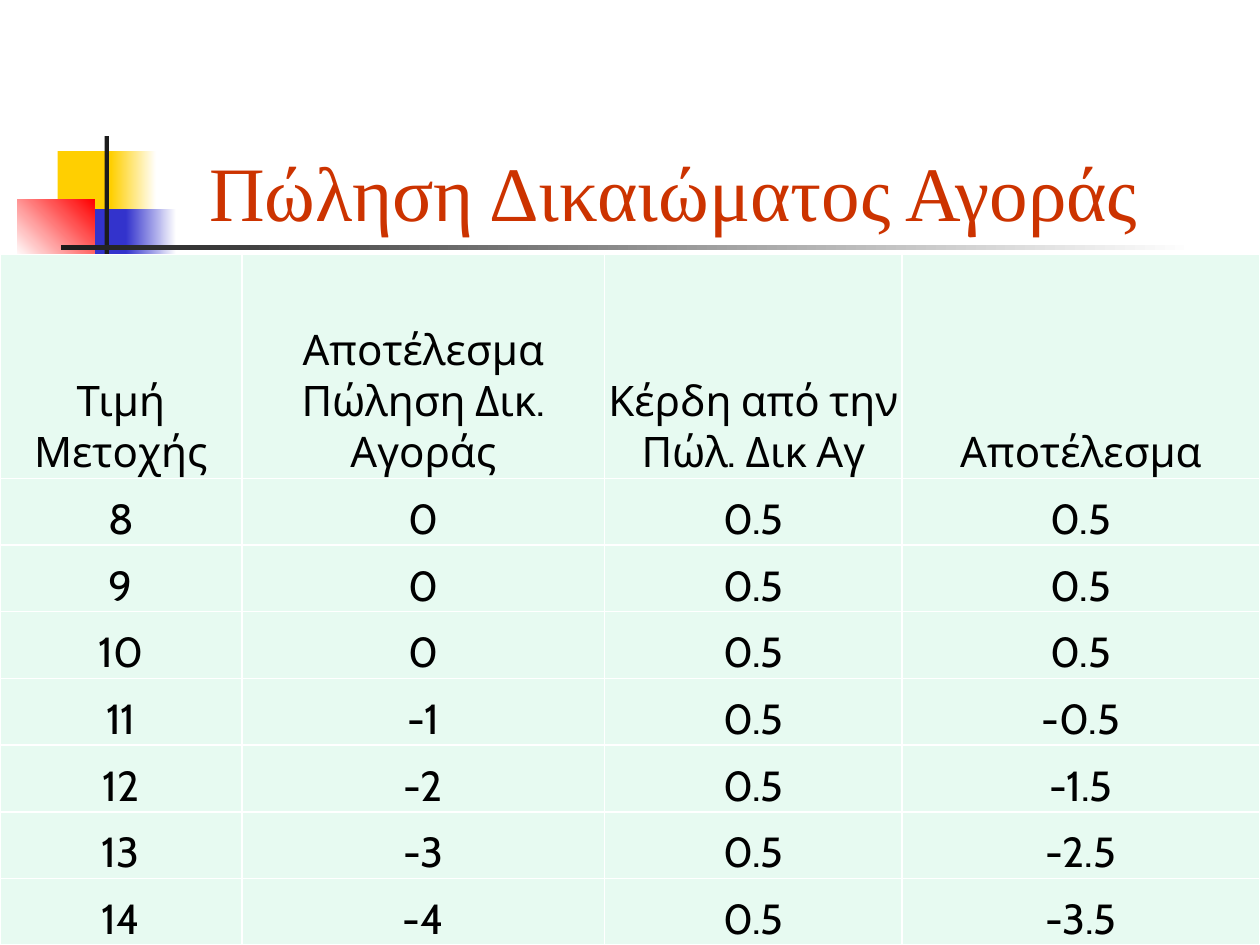
from pptx import Presentation
from pptx.dml.color import RGBColor
from pptx.enum.shapes import MSO_SHAPE
from pptx.enum.text import MSO_ANCHOR, PP_ALIGN
from pptx.oxml.xmlchemy import OxmlElement
from pptx.util import Pt

HUES = {
    "gold": "FFCF01", "blue": "3333CC", "red": "FF0000", "dark": "1C1C1C",
    "white": "FFFFFF", "title": "CC3300", "mint": "E7FAF1", "text": "000000",
}


def hue(name):
    return RGBColor.from_string(HUES[name])


class Deck:
    head_font = "Times New Roman"
    body_font = "Cabin"

    def __init__(self, wide, high):
        self.prs = Presentation()
        self.prs.slide_width, self.prs.slide_height = Pt(wide), Pt(high)
        self.slide = self.prs.slides.add_slide(self.prs.slide_layouts[5])

    def label(self, frame, text, font, size, color):
        frame.word_wrap = True
        para = frame.paragraphs[0]
        para.alignment = PP_ALIGN.CENTER
        run = para.add_run()
        run.text = text
        run.font.name, run.font.size = font, Pt(size)
        run.font.color.rgb = hue(color)

    def title(self, text, left, top, wide, high):
        box = self.slide.shapes.title
        box.left, box.top, box.width, box.height = map(Pt, (left, top, wide, high))
        box.text_frame.vertical_anchor = MSO_ANCHOR.BOTTOM
        self.label(box.text_frame, text, self.head_font, 44, "title")
        box.element.getparent().append(box.element)  # in front of the motif

    def block(self, left, top, wide, high, *colors, angle=0):
        shape = self.slide.shapes.add_shape(
            MSO_SHAPE.RECTANGLE, Pt(left), Pt(top), Pt(wide), Pt(high))
        shape.shadow.inherit = False
        shape.line.fill.background()
        if len(colors) == 1:
            shape.fill.solid()
            shape.fill.fore_color.rgb = hue(colors[0])
            return
        shape.fill.gradient()
        shape.fill.gradient_angle = angle
        for stop, color in zip(shape.fill.gradient_stops, colors):
            stop.color.rgb = hue(color)

    def border(self, cell):
        props = cell._tc.get_or_add_tcPr()
        for spot, side in enumerate(("lnL", "lnR", "lnT", "lnB")):
            line = OxmlElement(f"a:{side}")
            line.set("w", str(Pt(1)))
            fill = OxmlElement("a:solidFill")
            color = OxmlElement("a:srgbClr")
            color.set("val", HUES["white"])
            fill.append(color)
            line.append(fill)
            props.insert(spot, line)

    def table(self, rows, left, top, cols, highs):
        grid = self.slide.shapes.add_table(
            len(rows), len(cols), Pt(left), Pt(top), Pt(sum(cols)), Pt(sum(highs))).table
        for col, wide in zip(grid.columns, cols):
            col.width = Pt(wide)
        for row, high, texts in zip(grid.rows, highs, rows):
            row.height = Pt(high)
            for cell, text in zip(row.cells, texts):
                cell.margin_left = cell.margin_right = cell.margin_top = Pt(0.7)
                cell.margin_bottom = 0
                cell.vertical_anchor = MSO_ANCHOR.BOTTOM
                cell.fill.solid()
                cell.fill.fore_color.rgb = hue("mint")
                self.border(cell)
                self.label(cell.text_frame, text, self.body_font, 24, "text")


def main():
    deck = Deck(720, 540)

    # Corner motif: squares that fade out, and two crossing bars
    deck.block(33, 86.4, 34.6, 37.4, "gold")
    deck.block(63.4, 86.4, 25.9, 37.4, "gold", "white")
    deck.block(42.5, 119.5, 33.1, 37.4, "blue")
    deck.block(72, 119.5, 28.8, 37.4, "blue", "white")
    deck.block(10, 113.8, 44, 33.1, "white", "red", angle=45)
    deck.block(59.8, 77.8, 2.5, 82.8, "dark")
    deck.block(34.6, 140.2, 648, 2.5, "dark", "white")

    deck.title("Πώληση Δικαιώματος Αγοράς", 66.2, 49, 638, 90)

    # Payoff of a sold call at each share price
    strike, fee = 10, 0.5
    rows = [("Τιμή Μετοχής", "Αποτέλεσμα Πώληση Δικ. Αγοράς",
             "Κέρδη από την Πώλ. Δικ Αγ", "Αποτέλεσμα")]
    for price in range(8, 15):
        loss = min(0, strike - price)
        rows.append([str(num) for num in (price, loss, fee, loss + fee)])
    deck.table(rows, 0, 145.4, (138.2, 207.4, 169.9, 204.5), [128] + [38.1] * 7)

    deck.prs.save("out.pptx")


if __name__ == "__main__":
    main()
